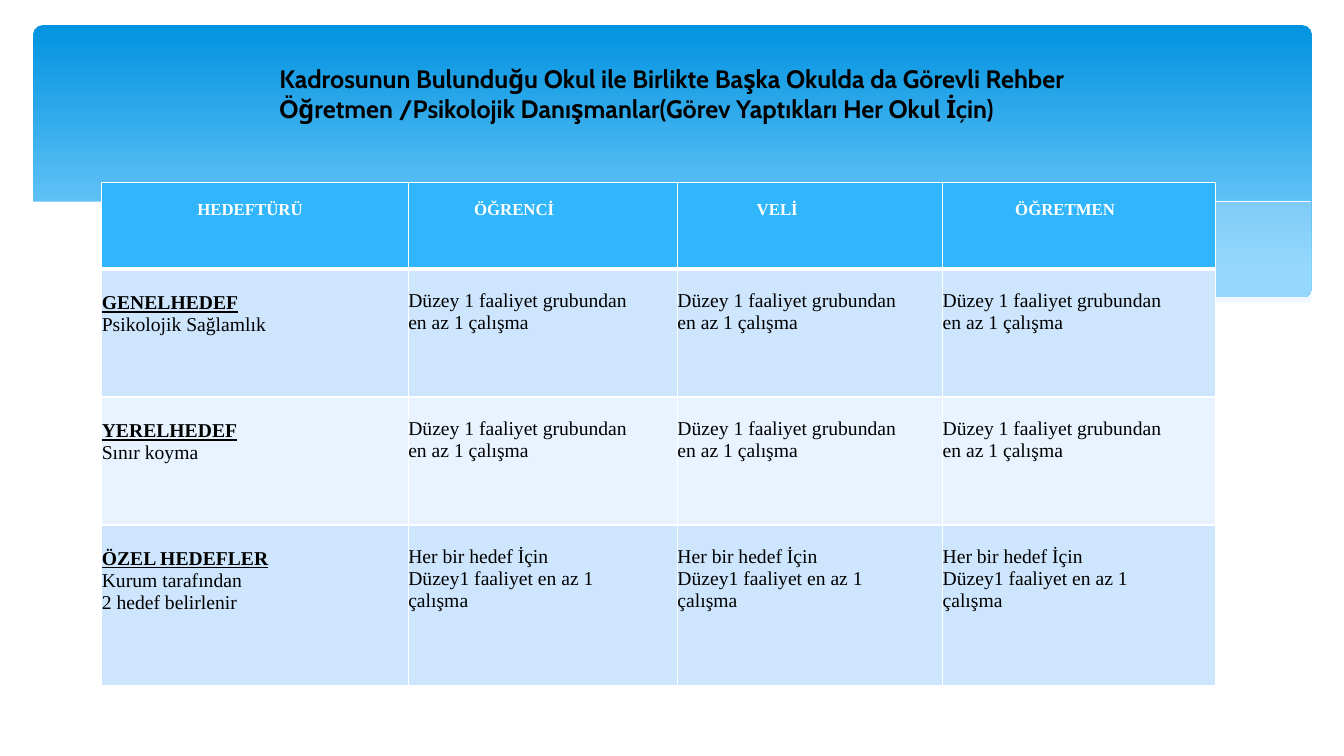
from lxml.etree import SubElement
from pptx import Presentation
from pptx.dml.color import RGBColor
from pptx.enum.shapes import MSO_SHAPE
from pptx.enum.text import MSO_ANCHOR, MSO_AUTO_SIZE, PP_ALIGN
from pptx.oxml.ns import qn
from pptx.util import Inches, Pt

COLORS = {
    "white": "FFFFFF", "black": "000000", "sky_top": "0293E0", "sky_bottom": "83D3FE",
    "mist": "C6E7FC", "header": "31B6FD", "band_dark": "CEE5FE", "band_light": "E8F3FF",
}
RGB = {name: RGBColor.from_string(value) for name, value in COLORS.items()}

presentation = Presentation()
presentation.slide_width, presentation.slide_height = Inches(13.33), Inches(7.5)
slide = presentation.slides.add_slide(presentation.slide_layouts[5])

# Grid: 13.33 columns by 7.5 rows
column = presentation.slide_width / 13.33
row = presentation.slide_height / 7.5


def place(shape, left, top, width, height):
    shape.left, shape.top = int(left * column), int(top * row)
    shape.width, shape.height = int(width * column), int(height * row)


def add_border(cell, side, points):
    line = SubElement(cell._tc.get_or_add_tcPr(), qn(f"a:{side}"), w=str(Pt(points)))
    fill = SubElement(line, qn("a:solidFill"))
    SubElement(fill, qn("a:srgbClr"), val=COLORS["white"])


# Blue banner
banner = slide.shapes.add_shape(MSO_SHAPE.ROUNDED_RECTANGLE, 0, 0, 0, 0)
place(banner, 0.33, 0.25, 12.68, 2.7)
banner.adjustments[0] = 0.034
banner.shadow.inherit = False
banner.line.fill.background()
banner.fill.gradient()
banner.fill.gradient_angle = 270
for stop, color, position in zip(banner.fill.gradient_stops, ("sky_top", "sky_bottom"), (0, 0.9)):
    stop.color.rgb = RGB[color]
    stop.position = position

# Waves: fill colour (None for a line), opacity in percent, points
waves = [
    ("mist", 29, [
        (13.01, 2), (12.65, 2.04), (12.27, 2.1), (11.88, 2.16), (11.47, 2.23), (10.73, 2.37),
        (10.05, 2.48), (9.41, 2.57), (8.82, 2.65), (9.4, 2.71), (9.93, 2.75), (10.41, 2.77),
        (10.85, 2.78), (11.26, 2.77), (11.63, 2.74), (11.96, 2.7), (12.28, 2.65),
        (12.57, 2.59), (12.84, 2.52), (13.01, 2.47)]),
    ("mist", 40, [
        (11.9, 2.73), (11.16, 2.65), (10.34, 2.54), (9.41, 2.4), (8.39, 2.22), (7.78, 2.11),
        (7.21, 2.03), (6.52, 1.94), (5.89, 1.89), (5.32, 1.86), (4.82, 1.85), (4.37, 1.87),
        (3.82, 1.91), (4.56, 1.99), (5.39, 2.11), (5.99, 2.22), (7.06, 2.4), (8.02, 2.55),
        (8.87, 2.66), (9.63, 2.74), (10.3, 2.77), (10.9, 2.78), (11.43, 2.77)]),
    (None, 100, [
        (4.12, 1.95), (4.47, 1.91), (4.99, 1.88), (5.55, 1.87), (6.25, 1.89), (7.1, 1.94),
        (8.11, 2.04), (9.27, 2.19), (10.14, 2.33), (11.08, 2.51), (12.1, 2.72)]),
    (None, 100, [
        (8.18, 2.57), (8.7, 2.46), (9.27, 2.35), (9.97, 2.23), (10.75, 2.1), (11.55, 1.99),
        (11.94, 1.94), (12.32, 1.9), (12.67, 1.87), (13, 1.85)]),
    ("white", 100, [
        (13.03, 2.46), (12.79, 2.53), (12.54, 2.59), (12.27, 2.65), (11.98, 2.69),
        (11.67, 2.73), (11.34, 2.75), (10.78, 2.77), (10.15, 2.75), (9.44, 2.7), (8.63, 2.62),
        (7.72, 2.5), (6.71, 2.33), (5.96, 2.2), (5.21, 2.07), (4.53, 1.97), (3.9, 1.9),
        (3.33, 1.86), (2.82, 1.84), (2.14, 1.84), (1.76, 1.86), (1.42, 1.89), (1.13, 1.93),
        (0.89, 1.97), (0.69, 2.01), (0.48, 2.07), (0.31, 2.13), (0.31, 3.29), (13.03, 3.29)]),
]
for color, opacity, points in waves:
    builder = slide.shapes.build_freeform(*points[0], scale=column)
    builder.add_line_segments(points[1:], close=color is not None)
    wave = builder.convert_to_shape()
    wave.shadow.inherit = False
    if color is None:
        wave.fill.background()
        wave.line.color.rgb = RGB["white"]
        wave.line.width = Pt(0.5)
        continue
    wave.line.fill.background()
    wave.fill.solid()
    wave.fill.fore_color.rgb = RGB[color]
    if opacity < 100:
        color_element = wave.element.spPr.find(qn("a:solidFill"))[0]
        SubElement(color_element, qn("a:alpha"), val=str(opacity * 1000))

# Target table
activity = "Düzey 1 faaliyet grubundan en az 1 çalışma"
special_activity = "Her bir hedef İçin\nDüzey1 faaliyet en az 1 çalışma"
table_rows = [
    ["HEDEFTÜRÜ", "ÖĞRENCİ", "VELİ", "ÖĞRETMEN"],
    ["GENELHEDEF\nPsikolojik Sağlamlık"] + [activity] * 3,
    ["YERELHEDEF\nSınır koyma"] + [activity] * 3,
    ["ÖZEL HEDEFLER\nKurum tarafından\n2 hedef belirlenir"] + [special_activity] * 3,
]
column_widths = [3.04, 2.67, 2.63, 2.71]
row_heights = [0.86, 1.27, 1.27, 1.59]
header_insets = [0.1, 0.57, 0.65, 0.28]
row_fills = ["header", "band_dark", "band_light", "band_dark"]

frame = slide.shapes.add_table(4, 4, 0, 0, 0, 0)
place(frame, 1.01, 1.81, sum(column_widths), sum(row_heights))
table = frame.table
for table_column, width in zip(table.columns, column_widths):
    table_column.width = int(width * column)
for table_row, height in zip(table.rows, row_heights):
    table_row.height = int(height * row)

for row_index, texts in enumerate(table_rows):
    is_header = row_index == 0
    for column_index, text in enumerate(texts):
        cell = table.cell(row_index, column_index)
        is_target = column_index == 0 and not is_header
        for side in ("lnL", "lnR", "lnT", "lnB"):
            under_header = (row_index, side) in ((0, "lnB"), (1, "lnT"))
            add_border(cell, side, 3 if under_header else 1)
        cell.fill.solid()
        cell.fill.fore_color.rgb = RGB[row_fills[row_index]]
        cell.margin_left = cell.margin_bottom = 0
        cell.margin_top = int((0.18 if is_header else 0.23 if is_target else 0.21) * row)
        cell.margin_right = int((header_insets[column_index] if is_header else 0.4) * column)
        cell.text_frame.text = text
        for line_index, paragraph in enumerate(cell.text_frame.paragraphs):
            paragraph.alignment = PP_ALIGN.CENTER if is_header else PP_ALIGN.LEFT
            font = paragraph.runs[0].font
            font.name = "Times New Roman"
            font.size = Pt(12 if is_header else 14)
            font.bold = is_header or (is_target and line_index == 0)
            font.underline = is_target and line_index == 0
            font.color.rgb = RGB["white" if is_header else "black"]

# Title, in front of the banner
title = slide.shapes.title
slide.shapes.element.append(title.element)
place(title, 2.67, 0.57, 9.4, 0.71)
title_frame = title.text_frame
title_frame.text = ("Kadrosunun Bulunduğu Okul ile Birlikte Başka Okulda da Görevli Rehber "
                    "Öğretmen /Psikolojik Danışmanlar(Görev Yaptıkları Her Okul İçin)")
title_frame.word_wrap = True
title_frame.auto_size = MSO_AUTO_SIZE.NONE
title_frame.vertical_anchor = MSO_ANCHOR.MIDDLE
title_frame.margin_right = int(0.7 * column)
title_paragraph = title_frame.paragraphs[0]
title_paragraph.alignment = PP_ALIGN.LEFT
title_font = title_paragraph.runs[0].font
title_font.name, title_font.size, title_font.bold = "Cabin", Pt(18), True
title_font.color.rgb = RGB["black"]

presentation.save("out.pptx")
